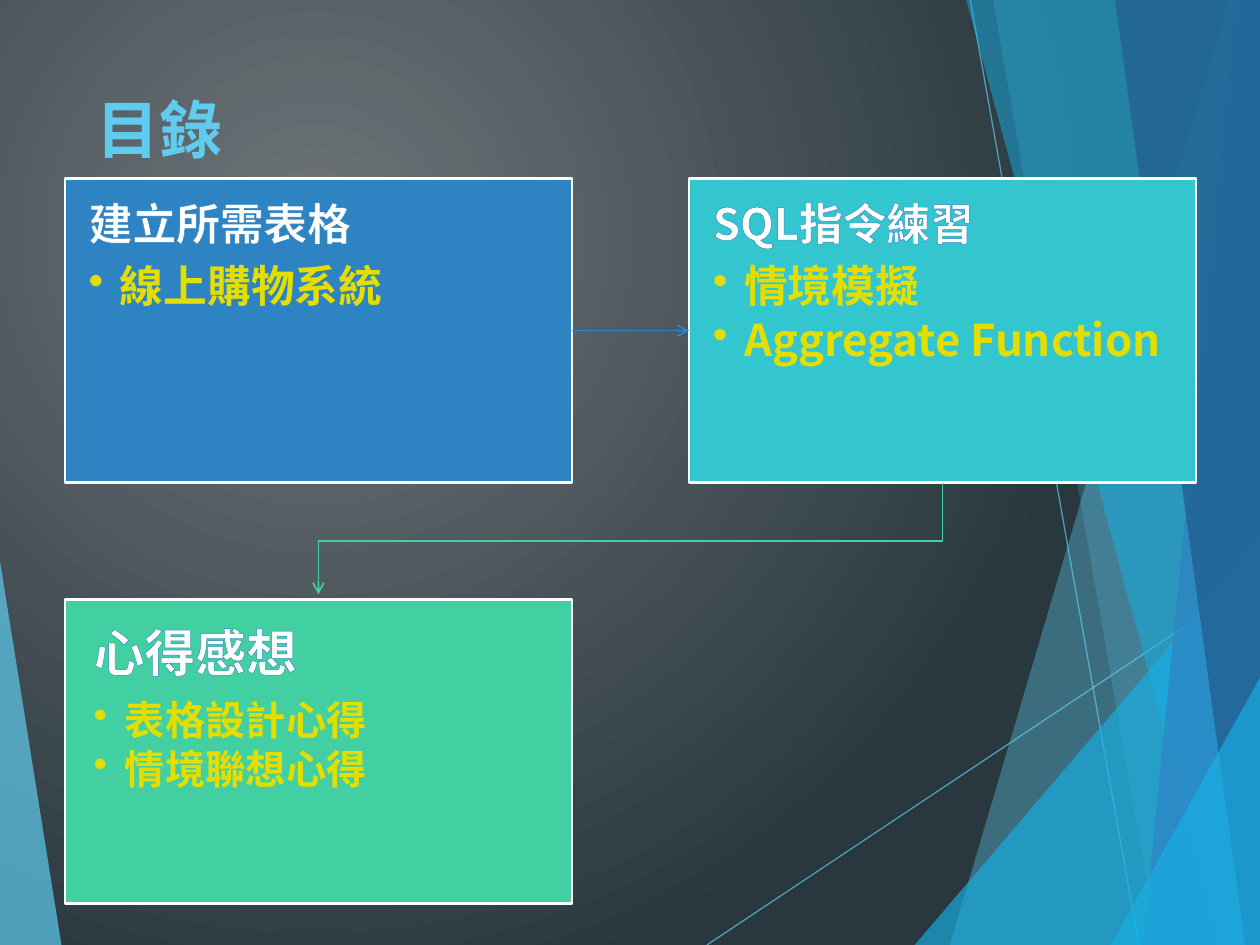
from dataclasses import dataclass

from lxml.etree import SubElement
from pptx import Presentation
from pptx.dml.color import RGBColor as Color
from pptx.enum.shapes import MSO_CONNECTOR as Connector, MSO_SHAPE as Preset
from pptx.enum.text import MSO_ANCHOR as Anchor, PP_ALIGN as Align
from pptx.oxml.ns import qn
from pptx.util import Cm, Pt

WIDTH, HEIGHT = 25.4, 19.05
TOP, LEFT, BOTTOM, RIGHT = range(4)


@dataclass(frozen=True)
class Theme:
    """Colours, font and type sizes of the slide."""
    font: str = "Noto Sans CJK SC"
    glow: str = "6E7478"
    dark: str = "29383F"
    sky: str = "5FCBEF"
    cyan: str = "17B0E4"
    blue: str = "2E83C3"
    navy: str = "226292"
    teal: str = "34C6CE"
    green: str = "42D0A2"
    white: str = "FFFFFF"
    yellow: str = "E3DE00"
    title_size: int = 36
    body_size: int = 25
    large_size: int = 29
    small_size: int = 23


def write_text(paragraph, text, *, font, size, color, outline=None,
               spacing=None, after=0, bullet=False):
    """Add one bold run to a paragraph and format both."""
    paragraph.alignment = Align.LEFT
    paragraph.space_before = Pt(0)
    paragraph.space_after = Pt(after)
    if spacing:
        paragraph.line_spacing = spacing
    if bullet:
        properties = paragraph._p.get_or_add_pPr()
        properties.set("marL", str(Cm(0.63)))
        properties.set("indent", str(-Cm(0.63)))
        SubElement(properties, qn("a:buChar"), char="•")
    run = paragraph.add_run()
    run.text = text
    run.font.name, run.font.size, run.font.bold = font, Pt(size), True
    run.font.color.rgb = Color.from_string(color)
    properties = run.font._element
    SubElement(properties, qn("a:ea"), typeface=font)
    if outline:
        line = SubElement(properties, qn("a:ln"), w=str(Pt(0.52)))
        fill = SubElement(line, qn("a:solidFill"))
        SubElement(fill, qn("a:srgbClr"), val=outline)
        properties.insert(0, line)


class SlideBuilder:
    """Hold the theme and the current slide, and add elements to it."""

    def __init__(self, slide, theme):
        """Keep the slide and its theme."""
        self.slide, self.theme = slide, theme

    def background(self):
        """Fill the background with a radial gradient."""
        fill = self.slide.background.fill
        fill.gradient()
        for stop, color in zip(fill.gradient_stops, (self.theme.glow, self.theme.dark)):
            stop.color.rgb = Color.from_string(color)
        linear = self.slide.element.find(".//" + qn("a:lin"))
        gradient = linear.getparent()
        gradient.remove(linear)
        circle = SubElement(gradient, qn("a:path"), path="circle")
        SubElement(circle, qn("a:fillToRect"), l="50000", t="50000", r="100000", b="100000")

    def set_alpha(self, shape, percent):
        """Make the first colour of a shape translucent."""
        color = shape.element.find(".//" + qn("a:srgbClr"))
        SubElement(color, qn("a:alpha"), val=str(percent * 1000))

    def freeform(self, points, close):
        """Draw an outline through points given in centimetres."""
        corners = [(Cm(x), Cm(y)) for x, y in points]
        builder = self.slide.shapes.build_freeform(*corners[0])
        builder.add_line_segments(corners[1:], close=close)
        shape = builder.convert_to_shape()
        shape.shadow.inherit = False
        return shape

    def facet(self, points, color, alpha):
        """Add a translucent polygon."""
        shape = self.freeform(points, True)
        shape.fill.solid()
        shape.fill.fore_color.rgb = Color.from_string(color)
        shape.line.fill.background()
        self.set_alpha(shape, alpha)

    def line(self, start, end, color, width):
        """Add a straight connector without a shadow."""
        ends = [Cm(value) for value in (*start, *end)]
        connector = self.slide.shapes.add_connector(Connector.STRAIGHT, *ends)
        self.format_line(connector, color, width)
        SubElement(connector.element.spPr, qn("a:effectLst"))
        return connector

    def format_line(self, shape, color, width, arrow=False):
        """Set colour, width and arrowhead of a line."""
        shape.line.color.rgb = Color.from_string(color)
        shape.line.width = Pt(width)
        if arrow:
            SubElement(shape.line._get_or_add_ln(), qn("a:tailEnd"), type="arrow")

    def title(self, text):
        """Place the title above the background facets."""
        title = self.slide.shapes.title
        title.left, title.top, title.width, title.height = map(Cm, (1.7, 1.7, 17.63, 3.66))
        title.element.getparent().append(title.element)
        title.text_frame.vertical_anchor = Anchor.TOP
        write_text(title.text_frame.paragraphs[0], text, font=self.theme.font,
                   size=self.theme.title_size, color=self.theme.sky)

    def card(self, left, top, width, height, color, heading, items,
             heading_size, item_size, inset):
        """Add a rectangle with a heading and bulleted items."""
        theme = self.theme
        shape = self.slide.shapes.add_shape(
            Preset.RECTANGLE, *map(Cm, (left, top, width, height)))
        shape.shadow.inherit = False
        shape.fill.solid()
        shape.fill.fore_color.rgb = Color.from_string(color)
        self.format_line(shape, theme.white, 1.5)
        frame = shape.text_frame
        frame.word_wrap, frame.vertical_anchor = True, Anchor.TOP
        frame.margin_left = frame.margin_top = Cm(inset)
        frame.margin_right = frame.margin_bottom = Cm(inset)
        write_text(frame.paragraphs[0], heading, font=theme.font, size=heading_size,
                   color=theme.white, outline=theme.blue, spacing=0.9,
                   after=heading_size * 0.35)
        for item in items:
            write_text(frame.add_paragraph(), item, font=theme.font, size=item_size,
                       color=theme.yellow, spacing=0.9, after=item_size * 0.15, bullet=True)
        return shape

    def straight_arrow(self, first, second, color):
        """Join the right side of one card to the left side of another."""
        connector = self.line((0, 0), (1, 1), color, 1)
        connector.begin_connect(first, RIGHT)
        connector.end_connect(second, LEFT)
        self.format_line(connector, color, 1, arrow=True)

    def bent_arrow(self, points, color):
        """Add an open path that ends in an arrowhead."""
        shape = self.freeform(points, False)
        shape.fill.background()
        self.format_line(shape, color, 1, arrow=True)


def draw_facets(builder):
    """Draw the translucent facets along both slide edges."""
    theme = builder.theme
    builder.facet([(0, 11.31), (1.24, HEIGHT), (0, HEIGHT)], theme.sky, 70)
    for start, end in (((14.25, HEIGHT), (WIDTH, 11.62)), ((19.56, 0), (22.96, HEIGHT))):
        builder.set_alpha(builder.line(start, end, theme.sky, 0.75), 70)
    facets = [
        (24.77, 0, 19.15, theme.sky, 36),
        (20.02, 0, 23.34, theme.sky, 20),
        (WIDTH, 10.9, 18.44, theme.cyan, 66),
        (19.48, 0, 24.64, theme.cyan, 50),
        (24.92, 0, 23.04, theme.blue, 70),
        (22.48, 0, 25.1, theme.navy, 82),
        (WIDTH, 13.66, 22.4, theme.cyan, 66),
    ]
    for top_x, top_y, bottom_x, color, alpha in facets:
        points = [(top_x, top_y), (bottom_x, HEIGHT), (WIDTH, HEIGHT), (WIDTH, top_y)]
        builder.facet(points, color, alpha)


def draw_cards(builder):
    """Draw the three contents cards and the arrows between them."""
    theme = builder.theme
    left, top, width, height = 1.31, 3.6, 10.22, 6.13
    column_step, row_step = 12.58, 8.48
    body = (theme.body_size, theme.body_size, 0.48)
    closing = (theme.large_size, theme.small_size, 0.58)
    contents = [
        (0, 0, theme.blue, "建立所需表格", ["線上購物系統"], body),
        (1, 0, theme.teal, "SQL指令練習", ["情境模擬", "Aggregate Function"], body),
        (0, 1, theme.green, "心得感想", ["表格設計心得", "情境聯想心得"], closing),
    ]
    cards = [
        builder.card(left + column * column_step, top + row * row_step, width, height,
                     color, heading, items, *sizes)
        for column, row, color, heading, items, sizes in contents
    ]
    builder.straight_arrow(cards[0], cards[1], theme.blue)
    end_x = left + width / 2
    start_x, start_y, end_y = end_x + column_step, top + height, top + row_step - 0.1
    middle_y = top + (height + row_step) / 2
    builder.bent_arrow([(start_x, start_y), (start_x, middle_y),
                        (end_x, middle_y), (end_x, end_y)], theme.green)


def main():
    """Build and save the contents slide."""
    presentation = Presentation()
    presentation.slide_width, presentation.slide_height = Cm(WIDTH), Cm(HEIGHT)
    slide = presentation.slides.add_slide(presentation.slide_layouts[5])
    builder = SlideBuilder(slide, Theme())
    builder.background()
    draw_facets(builder)
    builder.title("目錄")
    draw_cards(builder)
    presentation.save("out.pptx")


if __name__ == "__main__":
    main()
